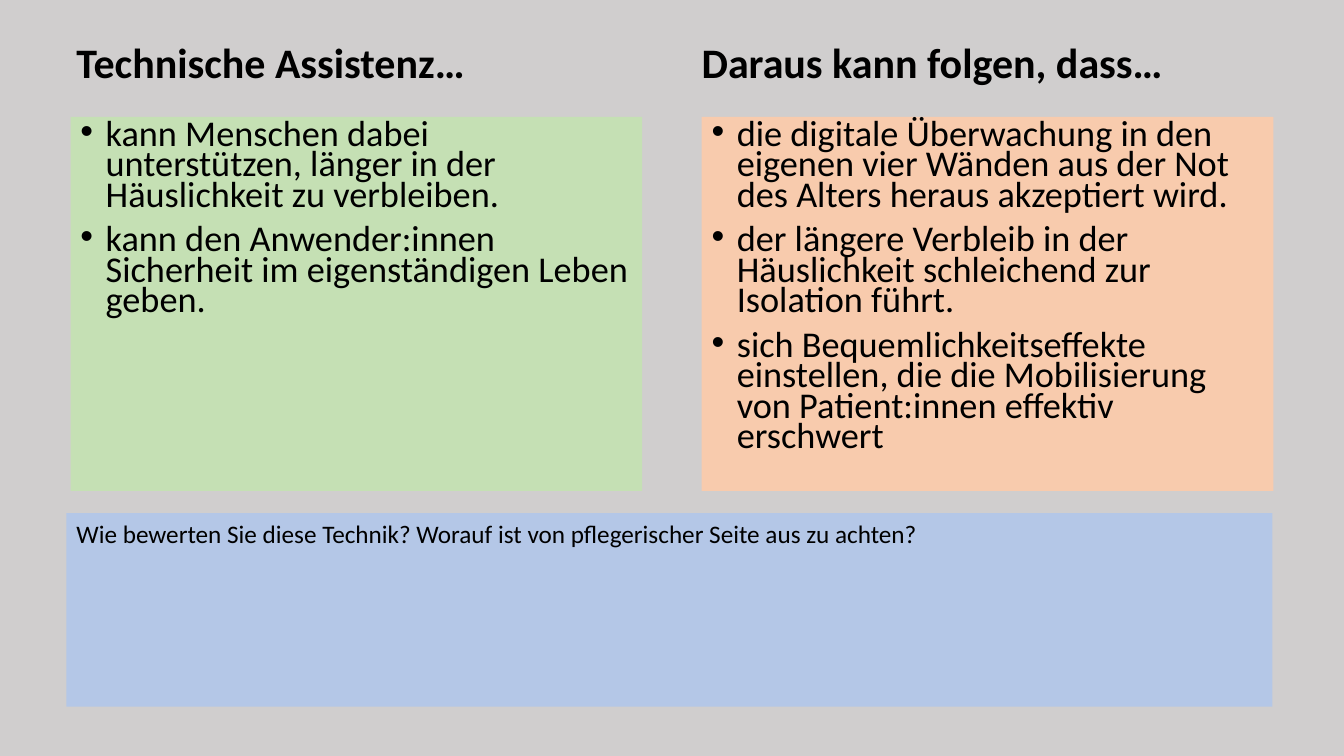
"""Build a slide weighing the benefits and risks of assistive technology."""
import pptx
import pptx.dml.color
import pptx.enum.shapes
import pptx.enum.text
import pptx.util
from lxml import etree

Inches = pptx.util.Inches
Pt = pptx.util.Pt
RGB = pptx.dml.color.RGBColor

BLACK = RGB(0x00, 0x00, 0x00)
GREY = RGB(0xD0, 0xCE, 0xCE)
GREEN = RGB(0xC5, 0xE0, 0xB4)
ORANGE = RGB(0xF8, 0xCB, 0xAD)
BLUE = RGB(0xB4, 0xC7, 0xE7)

HEADS = ["Technische Assistenz…", "Daraus kann folgen, dass…"]
LISTS = [
    (GREEN, [
        "kann Menschen dabei unterstützen, länger in der Häuslichkeit zu verbleiben.",
        "kann den Anwender:innen Sicherheit im eigenständigen Leben geben.",
    ]),
    (ORANGE, [
        "die digitale Überwachung in den eigenen vier Wänden aus der Not des Alters heraus akzeptiert wird.",
        "der längere Verbleib in der Häuslichkeit schleichend zur Isolation führt.",
        "sich Bequemlichkeitseffekte einstellen, die die Mobilisierung von Patient:innen effektiv erschwert",
    ]),
]
ASK = "Wie bewerten Sie diese Technik? Worauf ist von pflegerischer Seite aus zu achten?"

LEFT, STEP, WIDE = 0.7, 6.26, 5.67
EDGE = 0.66


def add(props, tag, **attrs):
    return etree.SubElement(props, pptx.oxml.ns.qn(tag), attrs)


def write(slide, lines, area, size, fill=None, bold=False, dots=False, tab=None):
    box = slide.shapes.add_shape(
        pptx.enum.shapes.MSO_SHAPE.RECTANGLE, *map(Inches, area))
    box.shadow.inherit = False
    box.line.fill.background()
    if fill is None:
        box.fill.background()
    else:
        box.fill.solid()
        box.fill.fore_color.rgb = fill
    frame = box.text_frame
    frame.word_wrap = True
    frame.vertical_anchor = pptx.enum.text.MSO_ANCHOR.TOP
    for i, line in enumerate(lines):
        para = frame.paragraphs[0] if i == 0 else frame.add_paragraph()
        para.alignment = pptx.enum.text.PP_ALIGN.LEFT
        run = para.add_run()
        run.text = line
        run.font.name = "Calibri"
        run.font.size = Pt(size)
        run.font.bold = bold
        run.font.color.rgb = BLACK
        props = para._p.get_or_add_pPr()
        if dots:
            para.line_spacing = 0.7
            para.space_before = Pt(10)
            props.set("marL", str(Inches(0.25)))
            props.set("indent", str(-Inches(0.25)))
            add(props, "a:buFont", typeface="Arial")
            add(props, "a:buChar", char="•")
        if tab:
            stops = add(props, "a:tabLst")
            add(stops, "a:tab", pos=str(Inches(tab)), algn="l")


def main():
    deck = pptx.Presentation()
    deck.slide_width, deck.slide_height = Inches(13.33), Inches(7.5)
    slide = deck.slides.add_slide(deck.slide_layouts[6])
    back = slide.background.fill
    back.solid()
    back.fore_color.rgb = GREY

    for i, (fill, lines) in enumerate(LISTS):
        area = (LEFT + i * STEP, 1.16, WIDE, 3.71)
        write(slide, lines, area, 25.9, fill=fill, dots=True)
    write(slide, ["\t".join(HEADS)], (EDGE, 0.31, 11.71, 0.61), 30,
          bold=True, tab=6.2)
    write(slide, [ASK], (EDGE, 5.09, 11.96, 1.92), 18, fill=BLUE)
    deck.save("out.pptx")


if __name__ == "__main__":
    main()
